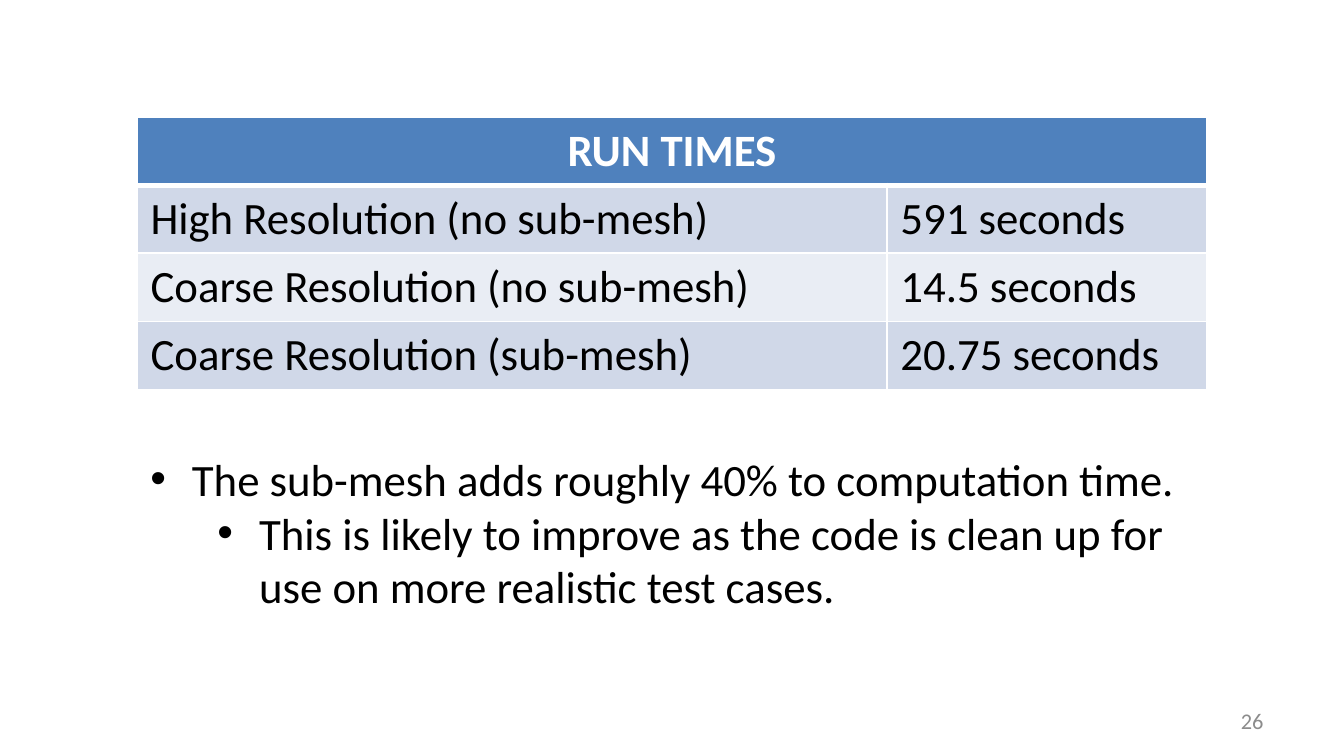
from lxml.etree import SubElement
from pptx import Presentation
from pptx.dml.color import RGBColor
from pptx.enum.text import MSO_ANCHOR, PP_ALIGN
from pptx.oxml import parse_xml
from pptx.oxml.ns import nsdecls, qn
from pptx.util import Inches, Pt

FONT = "Calibri"
COLORS = {
    "header": "4F81BD",
    "odd_row": "D0D8E8",
    "even_row": "E9EDF4",
    "white": "FFFFFF",
    "black": "000000",
    "gray": "8C8C8C",
}
TABLE_TITLE = "RUN TIMES"
RUN_TIMES = [
    ("High Resolution (no sub-mesh)", "591 seconds"),
    ("Coarse Resolution (no sub-mesh)", "14.5 seconds"),
    ("Coarse Resolution (sub-mesh)", "20.75 seconds"),
]
REMARKS = [
    (0, "The sub-mesh adds roughly 40% to computation time."),
    (1, "This is likely to improve as the code is clean up for use on more realistic test cases."),
]
PAGE_NUMBER = "26"

SLIDE_WIDTH = 10
SLIDE_HEIGHT = SLIDE_WIDTH * 9 / 16
LEFT, WIDTH = 1.02, 7.96
COLUMN_WIDTHS = (5.58, 2.38)
ROW_HEIGHT = 0.5
BULLET_INDENT, LEVEL_INDENT = 0.31, 0.5


def color(name):
    return RGBColor.from_string(COLORS[name])


def style_paragraph(paragraph, size, color_name, align=PP_ALIGN.LEFT, bold=False):
    paragraph.alignment = align
    for run in paragraph.runs:
        run.font.name = FONT
        run.font.size = Pt(size)
        run.font.bold = bold
        run.font.color.rgb = color(color_name)


def add_borders(cell, bottom_width):
    properties = cell._tc.get_or_add_tcPr()
    widths = {"lnL": 1, "lnR": 1, "lnT": 1, "lnB": bottom_width}
    for position, (side, width) in enumerate(widths.items()):
        properties.insert(position, parse_xml(
            f'<a:{side} {nsdecls("a")} w="{Pt(width)}"><a:solidFill>'
            f'<a:srgbClr val="{COLORS["white"]}"/></a:solidFill></a:{side}>'))


def fill_cell(cell, fill_name, bottom_width=1):
    cell.fill.solid()
    cell.fill.fore_color.rgb = color(fill_name)
    cell.vertical_anchor = MSO_ANCHOR.MIDDLE
    add_borders(cell, bottom_width)


def add_run_times(slide):
    row_count = len(RUN_TIMES) + 1
    table = slide.shapes.add_table(
        row_count, len(COLUMN_WIDTHS), Inches(LEFT), Inches(0.87),
        Inches(WIDTH), Inches(ROW_HEIGHT * row_count)).table
    for column, width in zip(table.columns, COLUMN_WIDTHS):
        column.width = Inches(width)

    title_cell = table.cell(0, 0)
    title_cell.merge(table.cell(0, len(COLUMN_WIDTHS) - 1))
    title_cell.text_frame.text = TABLE_TITLE
    style_paragraph(title_cell.text_frame.paragraphs[0], 24, "white", PP_ALIGN.CENTER, True)
    for cell in table.rows[0].cells:
        fill_cell(cell, "header", 3)

    for row, texts in enumerate(RUN_TIMES, 1):
        for column, text in enumerate(texts):
            cell = table.cell(row, column)
            cell.text_frame.text = text
            style_paragraph(cell.text_frame.paragraphs[0], 24, "black")
            fill_cell(cell, "odd_row" if row % 2 else "even_row")


def add_bullet(paragraph, level):
    paragraph.level = level
    properties = paragraph._p.get_or_add_pPr()
    properties.set("marL", str(Inches(BULLET_INDENT + level * LEVEL_INDENT)))
    properties.set("indent", str(-Inches(BULLET_INDENT)))
    SubElement(properties, qn("a:buFont"), typeface="Arial")
    SubElement(properties, qn("a:buChar"), char="•")


def add_text_frame(slide, left, top, width, height):
    box = slide.shapes.add_textbox(Inches(left), Inches(top), Inches(width), Inches(height))
    box.text_frame.word_wrap = True
    return box.text_frame


def add_remarks(slide):
    text_frame = add_text_frame(slide, LEFT, 3.31, WIDTH, 1.31)
    text_frame.text = "\n".join(text for _, text in REMARKS)
    for paragraph, (level, _) in zip(text_frame.paragraphs, REMARKS):
        add_bullet(paragraph, level)
        style_paragraph(paragraph, 24, "black")


def add_page_number(slide):
    text_frame = add_text_frame(slide, 7.17, 5.21, 2.33, 0.3)
    text_frame.vertical_anchor = MSO_ANCHOR.MIDDLE
    text_frame.text = PAGE_NUMBER
    style_paragraph(text_frame.paragraphs[0], 12, "gray", PP_ALIGN.RIGHT)


def main():
    presentation = Presentation()
    presentation.slide_width = Inches(SLIDE_WIDTH)
    presentation.slide_height = Inches(SLIDE_HEIGHT)
    slide = presentation.slides.add_slide(presentation.slide_layouts[6])
    add_run_times(slide)
    add_remarks(slide)
    add_page_number(slide)
    presentation.save("out.pptx")


if __name__ == "__main__":
    main()
